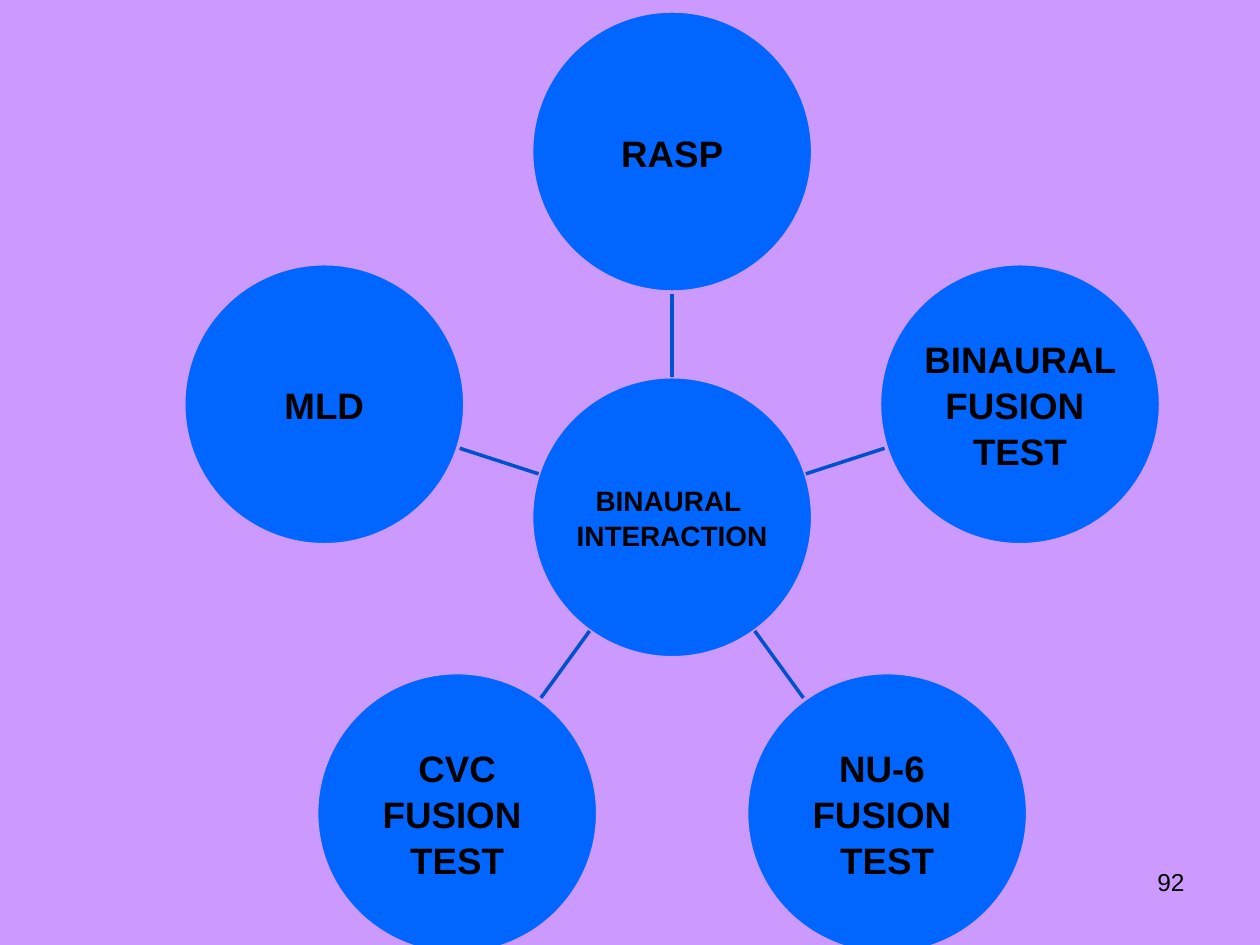
from dataclasses import dataclass
from math import cos, radians, sin

from lxml import etree
from pptx import Presentation
from pptx.dml.color import RGBColor
from pptx.enum import shapes, text
from pptx.oxml import ns
from pptx.util import Pt

COLORS = {"background": "CC99FF", "circle": "0066FF", "spoke": "0052CC", "ink": "000000"}
CENTER_X, CENTER_Y = 384.1, 295.6
DIAMETER = 160.6
RING_RADIUS = 209
SPOKE_START, SPOKE_END = 80.3, 128.5


@dataclass
class Topic:
    lines: list[str]
    angle: float = 0  # degrees clockwise from the top


HUB = Topic(["BINAURAL ", "INTERACTION"])
TOPICS = [
    Topic(lines, 72 * index)
    for index, lines in enumerate([
        ["RASP"],
        ["BINAURAL ", "FUSION ", "TEST"],
        ["NU-6 ", "FUSION ", "TEST"],
        ["CVC", "FUSION ", "TEST"],
        ["MLD"],
    ])
]


def color(name: str) -> RGBColor:
    return RGBColor.from_string(COLORS[name])


def polar(angle: float, radius: float) -> tuple[float, float]:
    """Point at a distance from the hub's centre."""
    turn = radians(angle)
    return CENTER_X + radius * sin(turn), CENTER_Y - radius * cos(turn)


def write(frame, lines: list[str], *, size: float, bold: bool = False,
          align=text.PP_ALIGN.CENTER, spacing: float = 1.0) -> None:
    for index, line in enumerate(lines):
        para = frame.paragraphs[0] if index == 0 else frame.add_paragraph()
        para.alignment = align
        para.line_spacing = spacing
        span = para.add_run()
        span.text = line
        span.font.name = "Arial"
        span.font.size = Pt(size)
        span.font.bold = bold
        span.font.color.rgb = color("ink")


def draw_circle(page, topic: Topic, radius: float, size: float) -> None:
    x, y = polar(topic.angle, radius)
    circle = page.shapes.add_shape(
        shapes.MSO_SHAPE.OVAL, Pt(x - DIAMETER / 2), Pt(y - DIAMETER / 2),
        Pt(DIAMETER), Pt(DIAMETER))
    circle.shadow.inherit = False
    circle.fill.solid()
    circle.fill.fore_color.rgb = color("circle")
    circle.line.color.rgb = color("background")
    circle.line.width = Pt(2)
    frame = circle.text_frame
    frame.word_wrap = True
    frame.vertical_anchor = text.MSO_ANCHOR.MIDDLE
    frame.margin_left = frame.margin_right = Pt(0.7)
    frame.margin_top = frame.margin_bottom = Pt(0.7)
    write(frame, topic.lines, size=size, bold=True, spacing=1.04)


def draw_spoke(page, angle: float) -> None:
    ends = polar(angle, SPOKE_START) + polar(angle, SPOKE_END)
    spoke = page.shapes.add_connector(
        shapes.MSO_CONNECTOR.STRAIGHT, *(Pt(value) for value in ends))
    spoke.line.color.rgb = color("spoke")
    spoke.line.width = Pt(2)
    etree.SubElement(spoke._element.spPr, ns.qn("a:effectLst"))


def main() -> None:
    deck = Presentation()
    deck.slide_width, deck.slide_height = Pt(720), Pt(540)
    page = deck.slides.add_slide(deck.slide_layouts[6])
    page.background.fill.solid()
    page.background.fill.fore_color.rgb = color("background")

    # Hub with its ring of topics
    draw_circle(page, HUB, 0, 16)
    for topic in TOPICS:
        draw_spoke(page, topic.angle)
        draw_circle(page, topic, RING_RADIUS, 21)

    # Page number
    box = page.shapes.add_textbox(Pt(516), Pt(492), Pt(168), Pt(37.5))
    box.text_frame.word_wrap = True
    write(box.text_frame, ["92"], size=14, align=text.PP_ALIGN.RIGHT)

    deck.save("out.pptx")


if __name__ == "__main__":
    main()
